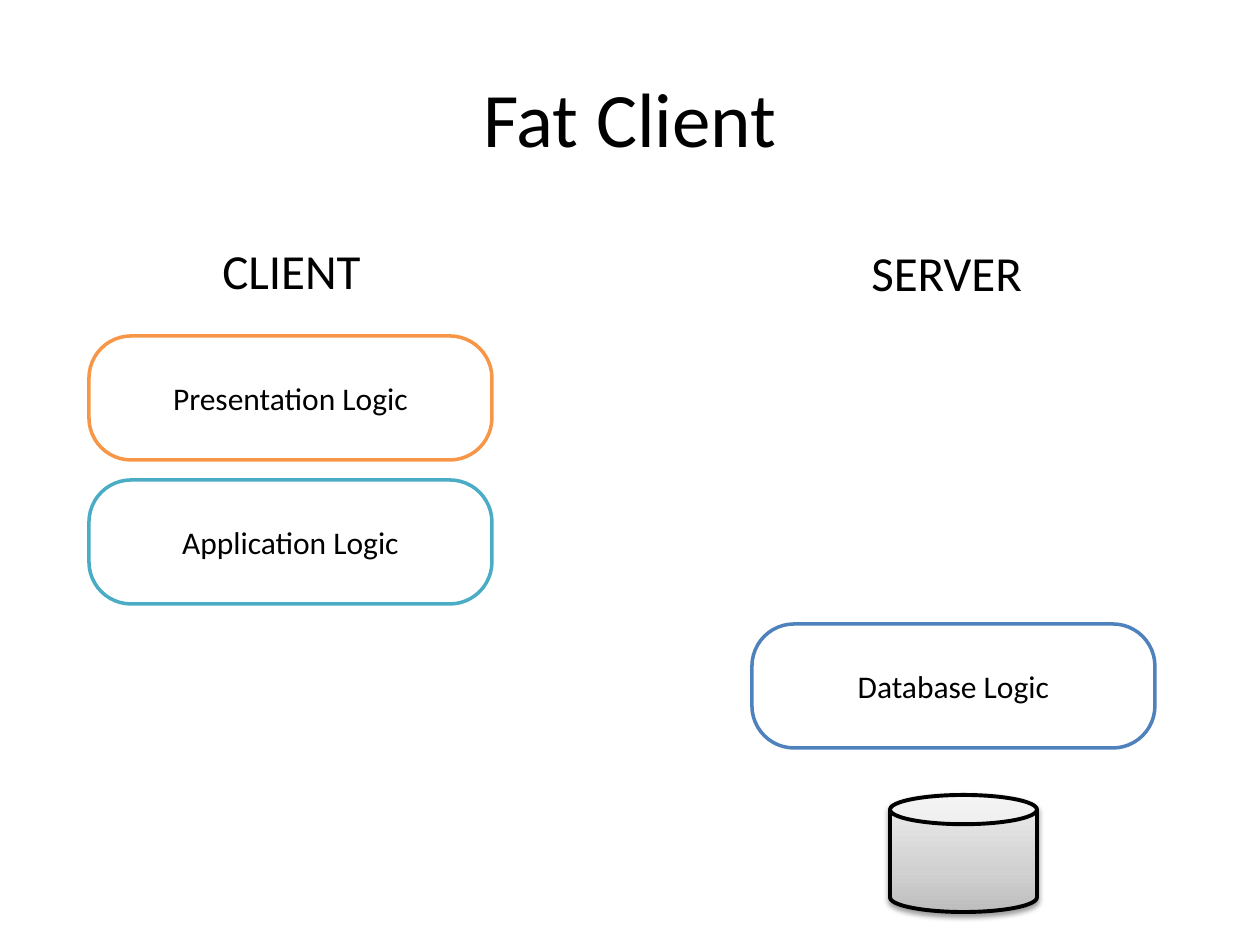
from pptx import Presentation
from pptx.dml.color import RGBColor as RGB
from pptx.enum.shapes import MSO_SHAPE as Form
from pptx.enum.text import MSO_ANCHOR as Anchor, MSO_AUTO_SIZE as Auto, PP_ALIGN as Align
from pptx.oxml import parse_xml
from pptx.oxml.ns import nsdecls
from pptx.util import Pt

PX = 914400 / 126
BLACK = RGB(0, 0, 0)
WHITE = RGB(255, 255, 255)
ORANGE = RGB(0xF7, 0x96, 0x46)
TEAL = RGB(0x4B, 0xAC, 0xC6)
BLUE = RGB(0x4F, 0x81, 0xBD)
GREYS = [(0, RGB(0xBD, 0xBD, 0xBD)), (35, RGB(0xD1, 0xD1, 0xD1)), (100, RGB(0xEE, 0xEE, 0xEE))]

TITLE = "Fat Client"
HEADS = [("CLIENT", (210, 234, 165, 72)), ("SERVER", (859, 236, 179, 72))]
LEFTS = {"client": 89, "server": 752}
LAYERS = [
    ("Application Logic", "client", 1, TEAL),
    ("Presentation Logic", "client", 0, ORANGE),
    ("Database Logic", "server", 2, BLUE),
]
TOP, PITCH, WIDE, HIGH = 336, 144, 403, 124
DISK = (890, 795, 147, 117)


def emu(*sizes):
    return [round(size * PX) for size in sizes]


def write(frame, text, size, align):
    para = frame.paragraphs[0]
    para.alignment = align
    run = para.add_run()
    run.text = text
    run.font.name = "Calibri"
    run.font.size = Pt(size)
    run.font.color.rgb = BLACK


def draw(slide, form, box, color, width):
    shape = slide.shapes.add_shape(form, *emu(*box))
    shape.shadow.inherit = False
    shape.line.color.rgb = color
    shape.line.width = Pt(width)
    return shape


def add_layer(slide, text, side, row, color):
    box = LEFTS[side], TOP + row * PITCH, WIDE, HIGH
    shape = draw(slide, Form.ROUNDED_RECTANGLE, box, color, 2)
    shape.adjustments[0] = 0.34
    shape.fill.solid()
    shape.fill.fore_color.rgb = WHITE
    shape.text_frame.vertical_anchor = Anchor.MIDDLE
    write(shape.text_frame, text, 18, Align.CENTER)


def add_disk(slide):
    disk = draw(slide, Form.CAN, DISK, BLACK, 2.25)
    disk.fill.gradient()
    disk.fill.gradient_angle = 90
    stops = disk.element.spPr.find(".//{*}gsLst")
    for stop in list(stops):
        stops.remove(stop)
    for pos, color in GREYS:
        stops.append(parse_xml(
            f'<a:gs {nsdecls("a")} pos="{pos * 1000}"><a:srgbClr val="{color}"/></a:gs>'))
    disk.element.spPr.find("{*}effectLst").append(parse_xml(
        f'<a:outerShdw {nsdecls("a")} blurRad="{Pt(3.1)}" dist="{Pt(1.6)}" dir="5400000" rotWithShape="0">'
        f'<a:srgbClr val="{BLACK}"><a:alpha val="38000"/></a:srgbClr></a:outerShdw>'))


def main():
    deck = Presentation()
    deck.slide_width, deck.slide_height = emu(1260, 945)
    slide = deck.slides.add_slide(deck.slide_layouts[5])
    title = slide.shapes.title
    title.left, title.top, title.width, title.height = emu(63, 38, 1134, 157)
    title.text_frame.vertical_anchor = Anchor.MIDDLE
    write(title.text_frame, TITLE, 44, Align.CENTER)
    for layer in LAYERS:
        add_layer(slide, *layer)
    for text, box in HEADS:
        frame = slide.shapes.add_textbox(*emu(*box)).text_frame
        frame.word_wrap = False
        frame.auto_size = Auto.SHAPE_TO_FIT_TEXT
        write(frame, text, 28, Align.LEFT)
    add_disk(slide)
    deck.save("out.pptx")


if __name__ == "__main__":
    main()
